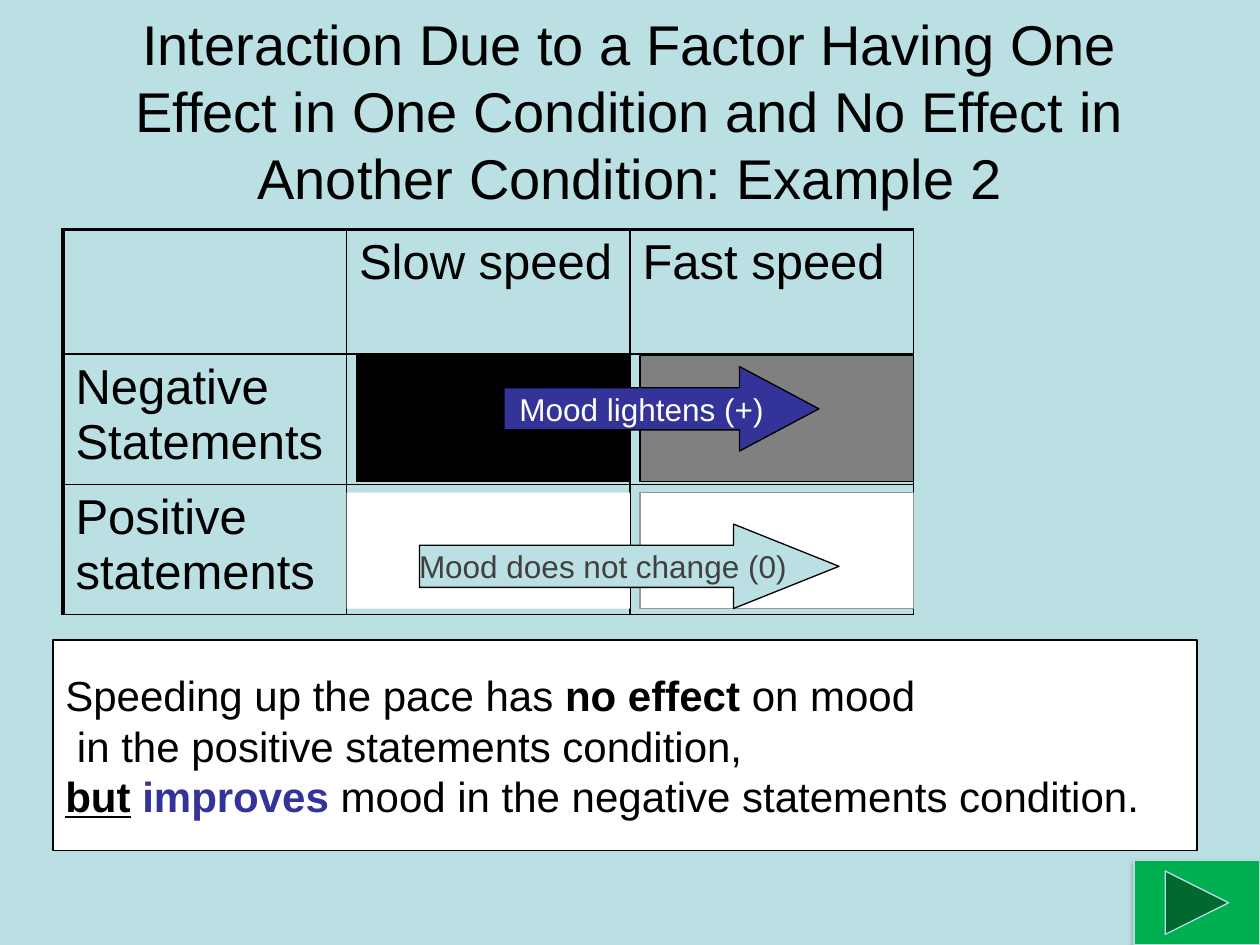
import pptx
import pptx.util
import pptx.dml.color
import pptx.enum.shapes
import pptx.enum.text
import pptx.oxml
import pptx.oxml.ns
from pptx.util import Inches, Pt

RGBColor = pptx.dml.color.RGBColor
SHAPE = pptx.enum.shapes.MSO_SHAPE
ALIGN = pptx.enum.text.PP_ALIGN
MIDDLE = pptx.enum.text.MSO_ANCHOR.MIDDLE

PALE = RGBColor(0xBB, 0xE0, 0xE3)
BLACK = RGBColor(0, 0, 0)
WHITE = RGBColor(0xFF, 0xFF, 0xFF)
GRAY = RGBColor(0x80, 0x80, 0x80)
SILVER = RGBColor(0x96, 0x96, 0x96)
CHARCOAL = RGBColor(0x40, 0x40, 0x40)
INDIGO = RGBColor(0x33, 0x33, 0x99)
GREEN = RGBColor(0, 0xB0, 0x50)
BUTTON_EDGE = RGBColor(0xB6, 0xDC, 0xDF)

WIDTH, HEIGHT = 10, 7.5
TITLE = ("Interaction Due to a Factor Having One Effect in One Condition "
         "and No Effect in Another Condition: Example 2")
CELLS = [["", "Slow speed", "Fast speed"],
         ["Negative Statements", "", ""],
         ["Positive statements", "", ""]]
TABLE_LEFT, TABLE_TOP, COLUMN_WIDTH = 0.5, 1.82, 2.25
ROW_HEIGHTS = [0.99, 1.03, 1.03]
THIN, THICK = 1, 2.25

CONCLUSION = [
    [("Speeding up the pace has", {}), (" no effect ", {"bold": True}), ("on mood", {})],
    [(" in the positive statements condition,", {})],
    [("but", {"bold": True, "underline": True}), (" ", {}),
     ("improves", {"bold": True, "color": INDIGO}),
     (" mood in the negative statements condition.", {})],
]

# row top, height, then per condition: column, left gap, fill, line
MOOD_ROWS = [
    (3.91, 0.92, [(2, 0.08, WHITE, SILVER), (1, 0, WHITE, None)]),
    (2.82, 1, [(2, 0.08, GRAY, BLACK), (1, 0.08, BLACK, BLACK)]),
]
# text, left, top, width, head length, fill, font colour
ARROWS = [
    ("Mood does not change (0)", 3.33, 4.16, 3.33, 1.25, PALE, CHARCOAL),
    ("Mood lightens (+)", 4, 2.91, 2.5, 0.94, INDIGO, WHITE),
]
ARROW_HEIGHT = 0.67

BORDER = ('<a:{side} xmlns:a="{ns}" w="{width}"><a:solidFill><a:srgbClr val="{color}"/>'
          '</a:solidFill></a:{side}>')
SHADOW = ('<a:effectLst xmlns:a="{ns}"><a:outerShdw blurRad="{blur}" dist="{distance}" '
          'dir="5400000" rotWithShape="0"><a:srgbClr val="000000"><a:alpha val="35000"/>'
          '</a:srgbClr></a:outerShdw></a:effectLst>')
NAMESPACE = pptx.oxml.ns.nsdecls("a").split('"')[1]


def add_paragraphs(frame, paragraphs, size, color=BLACK, align=ALIGN.LEFT):
    """Fill a text frame with paragraphs, each a list of (text, format) runs."""
    for index, runs in enumerate(paragraphs):
        paragraph = frame.add_paragraph() if index else frame.paragraphs[0]
        paragraph.alignment = align
        for text, formats in runs:
            run = paragraph.add_run()
            run.text = text
            values = {"name": "Arial", "size": Pt(size), "color": color, **formats}
            run.font.color.rgb = values.pop("color")
            for name, value in values.items():
                setattr(run.font, name, value)


def add_box(slide, preset, left, top, width, height, fill, line):
    shape = slide.shapes.add_shape(preset, *map(Inches, (left, top, width, height)))
    shape.shadow.inherit = False
    shape.fill.solid()
    shape.fill.fore_color.rgb = fill
    if line is None:
        shape.line.fill.background()
    else:
        shape.line.color.rgb = line
        shape.line.width = Pt(0.75)
    shape.text_frame.vertical_anchor = MIDDLE
    shape.text_frame.word_wrap = False
    return shape


def add_condition_table(slide):
    table = slide.shapes.add_table(
        len(CELLS), len(CELLS[0]), Inches(TABLE_LEFT), Inches(TABLE_TOP),
        Inches(COLUMN_WIDTH * len(CELLS[0])), Inches(sum(ROW_HEIGHTS))).table
    table.first_row = table.horz_banding = False
    for column in table.columns:
        column.width = Inches(COLUMN_WIDTH)
    for row_index, texts in enumerate(CELLS):
        table.rows[row_index].height = Inches(ROW_HEIGHTS[row_index])
        for column_index, text in enumerate(texts):
            cell = table.cell(row_index, column_index)
            widths = {"lnL": THIN if column_index else THICK, "lnR": THIN,
                      "lnT": THIN if row_index else THICK, "lnB": THIN}
            properties = cell._tc.get_or_add_tcPr()
            for side, width in widths.items():
                properties.append(pptx.oxml.parse_xml(BORDER.format(
                    side=side, ns=NAMESPACE, width=Pt(width), color=BLACK)))
            cell.fill.background()
            if text:
                add_paragraphs(cell.text_frame, [[(text, {})]], 28)


def main():
    presentation = pptx.Presentation()
    presentation.slide_width, presentation.slide_height = Inches(WIDTH), Inches(HEIGHT)
    slide = presentation.slides.add_slide(presentation.slide_layouts[6])
    slide.background.fill.solid()
    slide.background.fill.fore_color.rgb = PALE

    title = slide.shapes.add_textbox(*map(Inches, (0.5, 0.25, WIDTH - 1, 1.25))).text_frame
    title.word_wrap = True
    title.vertical_anchor = MIDDLE
    add_paragraphs(title, [[(TITLE, {})]], 32, align=ALIGN.CENTER)

    add_condition_table(slide)

    conclusion = add_box(slide, SHAPE.RECTANGLE, 0.42, 5.08, 9.08, 1.67, WHITE, BLACK)
    add_paragraphs(conclusion.text_frame, CONCLUSION, 24)

    for top, height, moods in MOOD_ROWS:
        for column, gap, fill, line in moods:
            left = TABLE_LEFT + column * COLUMN_WIDTH + gap
            add_box(slide, SHAPE.RECTANGLE, left, top, COLUMN_WIDTH - gap, height, fill, line)

    for text, left, top, width, head, fill, color in ARROWS:
        arrow = add_box(slide, SHAPE.RIGHT_ARROW, left, top, width, ARROW_HEIGHT, fill, BLACK)
        arrow.adjustments[1] = head
        add_paragraphs(arrow.text_frame, [[(text, {})]], 18, color, ALIGN.CENTER)

    button_width, button_height = 1, 0.67
    button = add_box(slide, SHAPE.ACTION_BUTTON_FORWARD_OR_NEXT, WIDTH - button_width,
                     HEIGHT - button_height, button_width, button_height, GREEN, BUTTON_EDGE)
    properties = button._element.spPr
    empty_effects = properties.find(pptx.oxml.ns.qn("a:effectLst"))
    properties.replace(empty_effects, pptx.oxml.parse_xml(
        SHADOW.format(ns=NAMESPACE, blur=Pt(3.1), distance=Pt(1.8))))

    presentation.save("out.pptx")


if __name__ == "__main__":
    main()
